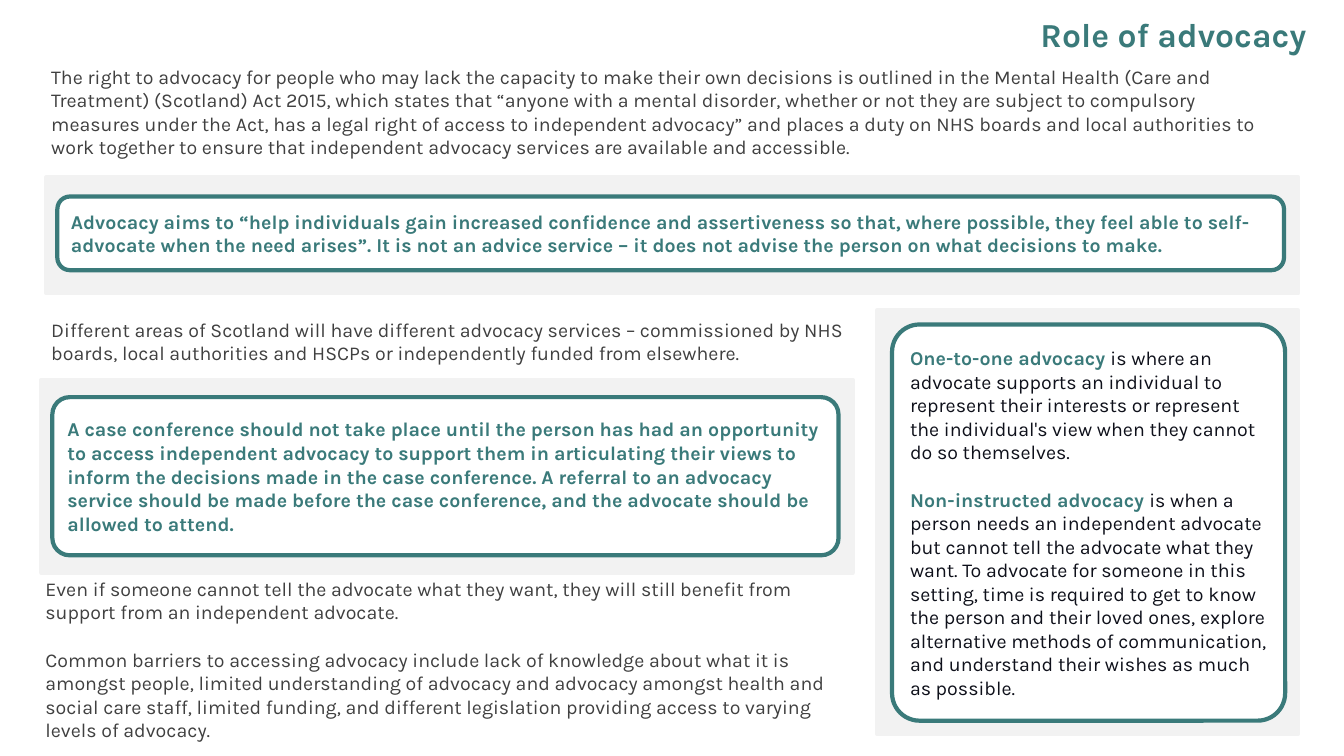
import dataclasses

import pptx
import pptx.dml.color
import pptx.enum.shapes
import pptx.enum.text
import pptx.oxml
import pptx.oxml.ns
import pptx.util

Pt = pptx.util.Pt
ALIGN = pptx.enum.text.PP_ALIGN
SHAPE = pptx.enum.shapes.MSO_SHAPE


@dataclasses.dataclass(frozen=True)
class Theme:
    font: str = "Karla"
    teal: str = "3A7A7A"
    panel: str = "F2F2F2"
    card: str = "FFFFFF"
    grey: str = "404040"
    ink: str = "0E101A"
    title_size: float = 24
    body_size: float = 14
    line_width: float = 3
    paragraph_gap: float = 17


def rgb(value):
    return pptx.dml.color.RGBColor.from_string(value)


def write_text(para, text, *, font, size, color, bold=False):
    span = para.add_run()
    span.text = text
    span.font.name = font
    span.font.size = Pt(size)
    span.font.bold = bold
    span.font.color.rgb = rgb(color)


class SlideBuilder:
    def __init__(self, page, theme):
        self.page = page
        self.theme = theme

    def fill_frame(self, box, paragraphs, size=None, align=ALIGN.LEFT):
        frame = box.text_frame
        frame.word_wrap = True
        frame.auto_size = pptx.enum.text.MSO_AUTO_SIZE.NONE
        frame.vertical_anchor = pptx.enum.text.MSO_ANCHOR.MIDDLE
        for index, spans in enumerate(paragraphs):
            para = frame.add_paragraph() if index else frame.paragraphs[0]
            para.alignment = align
            para.space_before = Pt(self.theme.paragraph_gap if index else 0)
            for text, color, bold in spans:
                write_text(para, text, font=self.theme.font,
                           size=size or self.theme.body_size, color=color, bold=bold)

    def place(self, box, bounds):
        box.left, box.top, box.width, box.height = map(Pt, bounds)

    def title(self, text, bounds):
        box = self.page.shapes.title
        self.place(box, bounds)
        self.fill_frame(box, [[(text, self.theme.teal, True)]],
                        self.theme.title_size, ALIGN.RIGHT)

    def body(self, texts, bounds):
        box = self.page.placeholders[1]
        self.place(box, bounds)
        self.fill_frame(box, [[(text, self.theme.grey, False)] for text in texts])
        for para in box.text_frame.paragraphs:
            properties = para._p.get_or_add_pPr()
            properties.set("marL", "0")
            properties.set("indent", "0")
            properties.append(pptx.oxml.parse_xml(
                "<a:buNone %s/>" % pptx.oxml.ns.nsdecls("a")))

    def text(self, text, bounds):
        box = self.page.shapes.add_textbox(*map(Pt, bounds))
        self.fill_frame(box, [[(text, self.theme.grey, False)]])

    def shape(self, kind, bounds, fill, line):
        box = self.page.shapes.add_shape(kind, *map(Pt, bounds))
        box.shadow.inherit = False
        box.fill.solid()
        box.fill.fore_color.rgb = rgb(fill)
        box.line.color.rgb = rgb(line)
        box.line.width = Pt(self.theme.line_width)
        return box

    def callout(self, panel_bounds, card_bounds, paragraphs, corner):
        theme = self.theme
        self.shape(SHAPE.RECTANGLE, panel_bounds, theme.panel, theme.panel)
        card = self.shape(SHAPE.ROUNDED_RECTANGLE, card_bounds, theme.card, theme.teal)
        card.adjustments[0] = corner
        self.fill_frame(card, paragraphs)


def main():
    theme = Theme()
    deck = pptx.Presentation()
    deck.slide_width, deck.slide_height = Pt(960), Pt(540)
    builder = SlideBuilder(deck.slides.add_slide(deck.slide_layouts[1]), theme)

    builder.title("Role of advocacy", (666, 0, 274.3, 49))
    builder.text(
        "The right to advocacy for people who may lack the capacity to make their own "
        "decisions is outlined in the Mental Health (Care and Treatment) (Scotland) Act "
        "2015, which states that “anyone with a mental disorder, whether or not they are "
        "subject to compulsory measures under the Act, has a legal right of access to "
        "independent advocacy” and places a duty on NHS boards and local authorities to "
        "work together to ensure that independent advocacy services are available and "
        "accessible.",
        (29.5, 38.2, 897.1, 82.8))
    builder.callout(
        (33.1, 126.7, 894.2, 82.8), (41, 140.4, 876.2, 52.6),
        [[("Advocacy aims to “help individuals gain increased confidence and "
           "assertiveness so that, where possible, they feel able to self-advocate when "
           "the need arises”. It is not an advice service – it does not advise the "
           "person on what decisions to make.", theme.teal, True)]],
        corner=0.17)
    builder.callout(
        (626.4, 221.8, 301, 302.4), (637.2, 231.8, 280.8, 283),
        [[("One-to-one advocacy ", theme.teal, True),
          ("is where an advocate supports an individual to represent their interests or "
           "represent the individual's view when they cannot do so themselves.",
           theme.ink, False)],
         [("Non-instructed advocacy ", theme.teal, True),
          ("is when a person needs an independent advocate but cannot tell the advocate "
           "what they want. To advocate for someone in this setting, time is required to "
           "get to know the person and their loved ones, explore alternative methods of "
           "communication, and understand their wishes as much as possible.",
           theme.ink, False)]],
        corner=0.07)
    builder.text(
        "Different areas of Scotland will have different advocacy services – commissioned "
        "by NHS boards, local authorities and HSCPs or independently funded from elsewhere.",
        (29.5, 221.8, 591.1, 43.9))
    builder.callout(
        (29.5, 271.4, 579.6, 137.5), (37.4, 283.7, 561.6, 113),
        [[("A case conference should not take place until the person has had an "
           "opportunity to access independent advocacy to support them in articulating "
           "their views to inform the decisions made in the case conference. A referral "
           "to an advocacy service should be made before the case conference, and the "
           "advocate should be allowed to attend.", theme.teal, True)]],
        corner=0.11)
    builder.body(
        ["Even if someone cannot tell the advocate what they want, they will still benefit "
         "from support from an independent advocate.",
         "Common barriers to accessing advocacy include lack of knowledge about what it is "
         "amongst people, limited understanding of advocacy and advocacy amongst health "
         "and social care staff, limited funding, and different legislation providing "
         "access to varying levels of advocacy."],
        (25.2, 409, 591.1, 123.8))

    deck.save("out.pptx")


if __name__ == "__main__":
    main()
